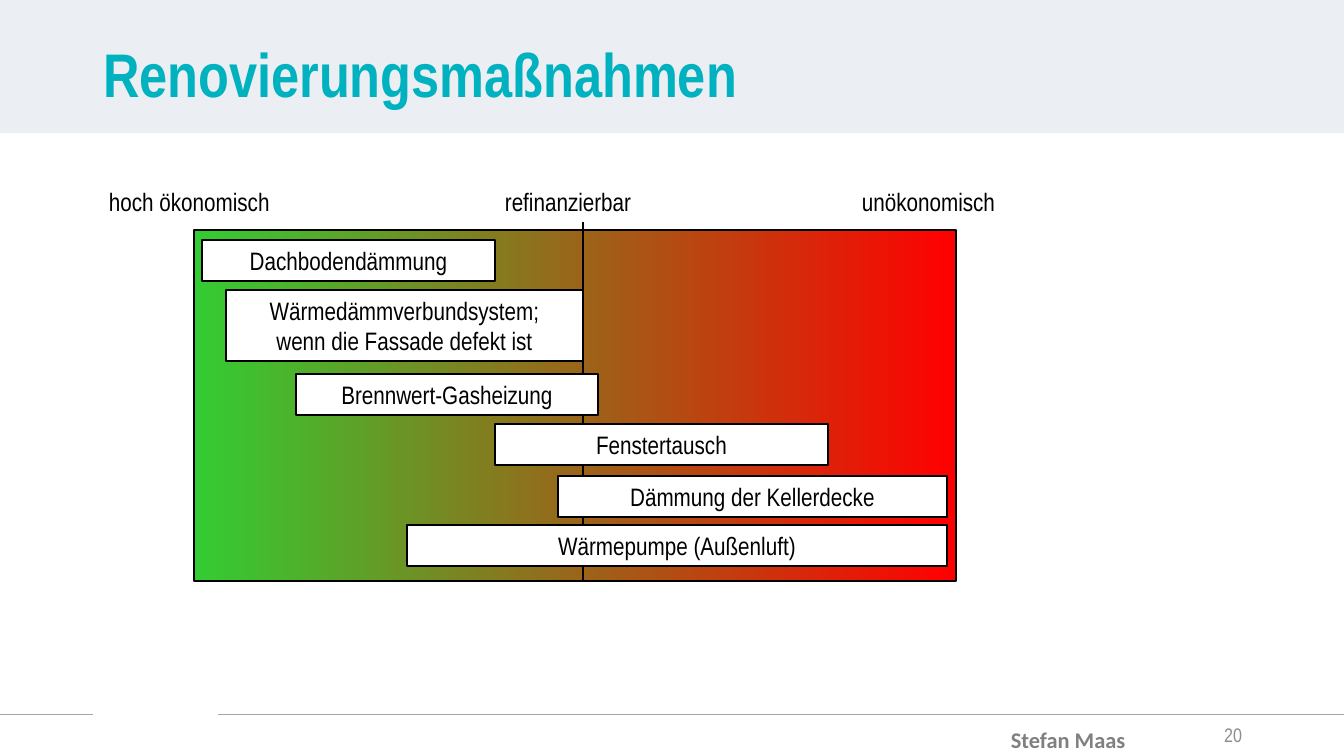
from lxml import etree
from pptx import Presentation
from pptx.dml.color import RGBColor as RGB
from pptx.enum.shapes import MSO_CONNECTOR as CONN, MSO_SHAPE as SHAPE
from pptx.enum.text import MSO_ANCHOR as ANCHOR, PP_ALIGN as ALIGN
from pptx.oxml.ns import qn
from pptx.util import Pt

PX = 914400 / 100.8
COLORS = {
    "band": "EBEEF2", "title": "00B1BF", "rule": "A6A6A6", "number": "8C8C8C",
    "author": "808080", "good": "33CC33", "bad": "FF0000",
    "black": "000000", "white": "FFFFFF",
}
NARROW = "Arial Narrow"

# Measure, left, top, width, height inside the panel
MEASURES = [
    (["Dachbodendämmung"], 8, 10, 293, 41),
    (["Wärmedämmverbundsystem;", "wenn die Fassade defekt ist"], 32, 60, 357, 71),
    (["Brennwert-Gasheizung"], 102, 144, 302, 41),
    (["Fenstertausch"], 301, 194, 333, 41),
    (["Dämmung der Kellerdecke"], 364, 246, 389, 41),
    (["Wärmepumpe (Außenluft)"], 213, 295, 540, 41),
]
# Label, left, width relative to the panel
SCALE_LABELS = [
    ("hoch ökonomisch", -95, 217),
    ("refinanzierbar", 301, 174),
    ("unökonomisch", 658, 182),
]


def px(*lengths):
    return [round(n * PX) for n in lengths]


def color(name):
    return RGB.from_string(COLORS[name])


def write(sp, lines, size, ink, font=NARROW, bold=False, align=ALIGN.LEFT,
          anchor=ANCHOR.TOP, spacing=None):
    tf = sp.text_frame
    tf.word_wrap = True
    tf.vertical_anchor = anchor
    for i, line in enumerate(lines):
        p = tf.paragraphs[0] if i == 0 else tf.add_paragraph()
        p.alignment = align
        if spacing:
            p.line_spacing = spacing
        r = p.add_run()
        r.text = line
        r.font.name, r.font.size, r.font.bold = font, Pt(size), bold
        r.font.color.rgb = color(ink)


def add_text(s, box, line, size, ink, **style):
    write(s.shapes.add_textbox(*px(*box)), [line], size, ink, **style)


def add_rect(s, box, fill=None, line=None):
    sp = s.shapes.add_shape(SHAPE.RECTANGLE, *px(*box))
    sp.shadow.inherit = False
    if fill:
        sp.fill.solid()
        sp.fill.fore_color.rgb = color(fill)
    if line:
        sp.line.color.rgb = color(line)
        sp.line.width = Pt(1)
    else:
        sp.line.fill.background()
    return sp


def add_line(s, ends, ink, width):
    line = s.shapes.add_connector(CONN.STRAIGHT, *px(*ends))
    line.line.color.rgb = color(ink)
    line.line.width = Pt(width)
    etree.SubElement(line._element.spPr, qn("a:effectLst"))


def header(s, box):
    x, y, w, h = box
    add_rect(s, box, "band")
    title = s.shapes.title
    s.shapes._spTree.append(title._element)  # bring in front of the band
    title.left, title.top, title.width, title.height = px(x + 93, y + 35, w - 185, 146)
    write(title, ["Renovierungsmaßnahmen"], 44, "title", bold=True, spacing=0.9)
    title.text_frame.margin_top = px(9)[0]


def economy_panel(s, box):
    x, y, w, h = box
    # Gradient from economical to uneconomical
    panel = add_rect(s, box, line="black")
    panel.fill.gradient()
    panel.fill.gradient_angle = 0
    for stop, position, name in zip(panel.fill.gradient_stops, (0, 1), ("good", "bad")):
        stop.position = position
        stop.color.rgb = color(name)
    # Break-even line
    add_line(s, (x + 389, y - 8, x + 389, y + h), "black", 1.5)
    # Measures
    for lines, dx, dy, bw, bh in MEASURES:
        bar = add_rect(s, (x + dx, y + dy, bw, bh), "white", "black")
        write(bar, lines, 18, "black", align=ALIGN.CENTER)
    # Scale labels
    for label, dx, lw in SCALE_LABELS:
        add_text(s, (x + dx, y - 49, lw, 41), label, 18, "black")


def footer(s, box):
    x, y, w, h = box
    # Rule with a gap
    for start, end in ((0, 93), (218, w)):
        add_line(s, (x + start, y, x + end, y), "rule", 0.5)
    # Page number and author
    add_text(s, (x + 950, y + 1, 302, 40), "20", 14, "number",
             align=ALIGN.RIGHT, anchor=ANCHOR.MIDDLE)
    add_text(s, (x + 1001, y + 13, 320, 29), "Stefan Maas", 16, "author",
             font="Calibri", bold=True, anchor=ANCHOR.MIDDLE, spacing=0.9)


def main():
    prs = Presentation()
    prs.slide_width, prs.slide_height = px(1344, 756)
    s = prs.slides.add_slide(prs.slide_layouts[5])
    header(s, (0, 0, 1344, 133))
    economy_panel(s, (194, 230, 762, 351))
    footer(s, (0, 714, 1344, 42))
    prs.save("out.pptx")


if __name__ == "__main__":
    main()
